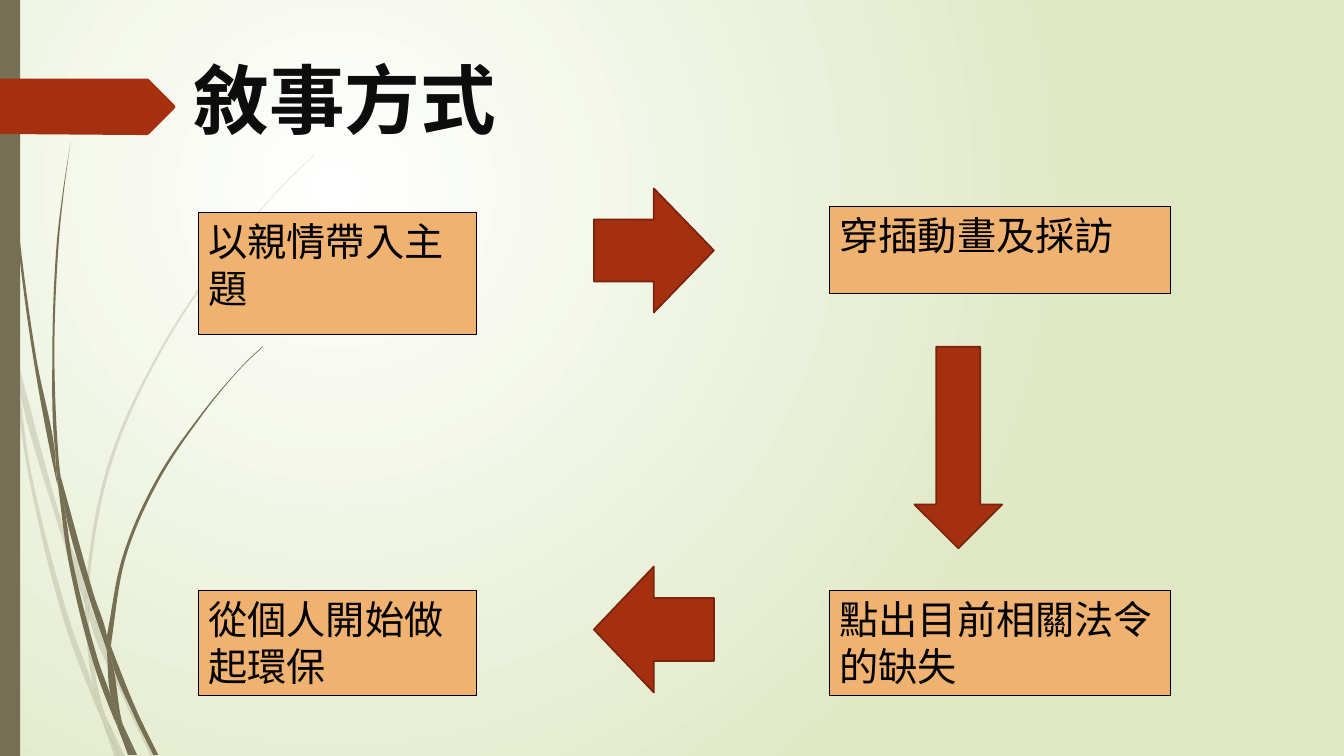
from math import hypot

from lxml.etree import SubElement
from pptx import Presentation
from pptx.dml.color import RGBColor
from pptx.enum.lang import MSO_LANGUAGE_ID
from pptx.enum.shapes import MSO_SHAPE
from pptx.enum.text import MSO_ANCHOR, PP_ALIGN
from pptx.oxml.ns import qn
from pptx.util import Emu, Pt

PX = 9144  # 100 px to the inch
FONT = "League Spartan"
WHITE = RGBColor(0xFF, 0xFF, 0xFF)
PALE_GREEN = RGBColor(0xDF, 0xE8, 0xC4)
OLIVE = RGBColor(0x76, 0x6F, 0x54)
RUST = RGBColor(0xA5, 0x30, 0x10)
DARK_RUST = RGBColor(0x7A, 0x24, 0x0C)
ORANGE = RGBColor(0xF0, 0xB2, 0x70)
BLACK = RGBColor(0x00, 0x00, 0x00)
TITLE_BLACK = RGBColor(0x0D, 0x0D, 0x0D)

# Outlines of the pieces of grass, as the points that their curves pass through.
FAINT_GRASS = [
    [(11, 350), (9, 322), (0, 282), (0, 299), (10, 344)],
    [(58, 522), (84, 599), (85, 586), (62, 520), (14, 345), (17, 376)],
    [(92, 607), (88, 596), (88, 610), (123, 694), (150, 751), (155, 751), (127, 692)],
    [(119, 751), (124, 751), (105, 711)],
    [(93, 683), (70, 619), (31, 469), (17, 376), (11, 350), (28, 470), (65, 621),
     (92, 693), (101, 714), (99, 707)],
    [(84, 599), (87, 646), (93, 683), (96, 692), (105, 711), (103, 706), (91, 646),
     (88, 610), (88, 608)],
    [(88, 584), (110, 462), (160, 349), (229, 245), (268, 198), (290, 175), (312, 154),
     (312, 153), (289, 175), (268, 197), (228, 244), (158, 348), (107, 461), (85, 584),
     (85, 586), (88, 596)],
    [(101, 714), (114, 751), (119, 751)],
    [(88, 608), (88, 610), (88, 596), (85, 586), (84, 599)],
    [(96, 692), (93, 683), (99, 707), (101, 714), (119, 751), (105, 711)],
]
DARK_GRASS = [
    [(7, 110), (17, 233), (33, 355), (56, 477), (57, 481), (55, 457), (55, 453),
     (36, 355), (19, 232), (8, 109), (5, 48), (4, 0), (3, 0), (4, 48)],
    [(88, 592), (106, 645), (106, 633), (106, 631), (93, 590), (60, 472), (64, 505)],
    [(113, 649), (110, 641), (111, 656), (132, 708), (152, 749), (157, 749), (136, 706)],
    [(110, 691), (98, 657), (72, 556), (64, 505), (57, 477), (68, 557), (93, 659),
     (111, 708), (117, 722), (116, 717)],
    [(60, 472), (58, 453), (54, 349), (58, 245), (63, 193), (70, 141), (62, 193),
     (56, 245), (52, 349), (55, 449)],
    [(133, 749), (136, 749), (122, 719)],
    [(57, 477), (64, 505), (60, 472), (55, 449), (55, 453)],
    [(111, 633), (125, 552), (158, 476), (205, 406), (231, 374), (245, 359), (261, 344),
     (260, 344), (245, 358), (231, 373), (204, 405), (156, 474), (122, 551), (106, 631),
     (110, 641)],
    [(117, 722), (127, 749), (131, 749)],
    [(106, 645), (110, 691), (116, 706), (122, 719), (121, 716), (111, 656), (109, 651)],
    [(106, 645), (109, 651), (111, 656), (110, 641), (106, 631), (106, 633)],
    [(116, 706), (110, 691), (116, 717), (117, 722), (130, 749), (133, 749), (122, 719)],
]
TAG = [(173, 108), (148, 133), (146, 134), (136, 134), (0, 133), (0, 78), (136, 78),
       (146, 78), (148, 79), (173, 104), (174, 106)]
STEPS = [
    ("以親情帶入主題", (197, 211, 276, 121)),
    ("穿插動畫及採訪", (823, 205, 338, 86)),
    ("點出目前相關法令的缺失", (823, 586, 338, 104)),
    ("從個人開始做起環保", (197, 586, 276, 104)),
]
ARROWS = [
    (MSO_SHAPE.RIGHT_ARROW, (589, 187, 119, 123)),
    (MSO_SHAPE.DOWN_ARROW, (907, 344, 87, 200)),
    (MSO_SHAPE.LEFT_ARROW, (589, 562, 119, 125)),
]


def px(n):
    return Emu(round(n * PX))


def paint(shape, fill, line=None, width=1):
    shape.shadow.inherit = False
    shape.fill.solid()
    shape.fill.fore_color.rgb = fill
    if line is None:
        shape.line.fill.background()
    else:
        shape.line.color.rgb = line
        shape.line.width = Pt(width)


def add_block(s, kind, box, fill, line=None, width=1):
    shape = s.shapes.add_shape(kind, *map(px, box))
    paint(shape, fill, line, width)


def write(shape, text, *, size, color, bold=False):
    tf = shape.text_frame
    tf.word_wrap = True
    tf.vertical_anchor = MSO_ANCHOR.TOP
    p = tf.paragraphs[0]
    p.alignment = PP_ALIGN.LEFT
    r = p.add_run()
    r.text = text
    r.font.name = FONT
    r.font.size = Pt(size)
    r.font.bold = bold
    r.font.color.rgb = color
    r.font.language_id = MSO_LANGUAGE_ID.TRADITIONAL_CHINESE


def unit(a, b):
    length = hypot(b[0] - a[0], b[1] - a[1])
    return (b[0] - a[0]) / length, (b[1] - a[1]) / length


def tangent(before, point, after, chord):
    """Direction of the curve at a point; a sharp corner keeps its chord."""
    u, v = unit(before, point), unit(point, after)
    if u[0] * v[0] + u[1] * v[1] < 0.85:
        return chord
    return unit((0, 0), (u[0] + v[0], u[1] + v[1]))


def curve_points(points):
    """Return two handles and an end for each side of a closed outline."""
    n = len(points)
    result = []
    for i, b in enumerate(points):
        a, c, d = points[i - 1], points[(i + 1) % n], points[(i + 2) % n]
        chord = unit(b, c)
        third = hypot(c[0] - b[0], c[1] - b[1]) / 3
        start, end = tangent(a, b, c, chord), tangent(b, c, d, chord)
        result += [(b[0] + start[0] * third, b[1] + start[1] * third),
                   (c[0] - end[0] * third, c[1] - end[1] * third), c]
    return result


def add_outline(s, points, fill, *, curved=False, opacity=100):
    segments = curve_points(points) if curved else points[1:]
    builder = s.shapes.build_freeform(*map(px, points[0]))
    builder.add_line_segments([(px(x), px(y)) for x, y in segments])
    shape = builder.convert_to_shape()
    paint(shape, fill)
    if curved:
        lines = list(shape._element.iter(qn("a:lnTo")))
        for i in range(0, len(segments), 3):
            curve = SubElement(lines[i].getparent(), qn("a:cubicBezTo"))
            lines[i].addprevious(curve)
            for line in lines[i:i + 3]:
                curve.append(line[0])
                line.getparent().remove(line)
    if opacity < 100:
        rgb = shape.fill._xPr.find(".//" + qn("a:srgbClr"))
        SubElement(rgb, qn("a:alpha"), val=str(opacity * 1000))


def set_background(s):
    fill = s.background.fill
    fill.gradient()
    for stop, color, position in zip(fill.gradient_stops, (WHITE, PALE_GREEN), (0, 1)):
        stop.color.rgb = color
        stop.position = position
    grad = s._element.find(".//" + qn("a:gradFill"))
    grad.remove(grad.find(qn("a:lin")))
    circle = SubElement(grad, qn("a:path"), path="circle")
    SubElement(circle, qn("a:fillToRect"), l="50000", t="50000", r="100000", b="100000")


def main():
    prs = Presentation()
    prs.slide_width, prs.slide_height = px(1333), px(750)
    s = prs.slides.add_slide(prs.slide_layouts[5])
    set_background(s)

    for grass, opacity in ((FAINT_GRASS, 20), (DARK_GRASS, 100)):
        for points in grass:
            add_outline(s, points, OLIVE, curved=True, opacity=opacity)
    add_block(s, MSO_SHAPE.RECTANGLE, (0, 0, 20, 750), OLIVE)
    add_outline(s, TAG, RUST)

    title = s.shapes.title
    title.left, title.top, title.width, title.height = map(px, (182, 47, 975, 140))
    write(title, "敘事方式", size=54, color=TITLE_BLACK, bold=True)

    for text, box in STEPS:
        add_block(s, MSO_SHAPE.RECTANGLE, box, ORANGE, BLACK, 0.75)
        write(s.shapes[-1], text, size=28, color=BLACK)
    for kind, box in ARROWS:
        add_block(s, kind, box, RUST, DARK_RUST, 1.25)

    prs.save("out.pptx")


if __name__ == "__main__":
    main()
